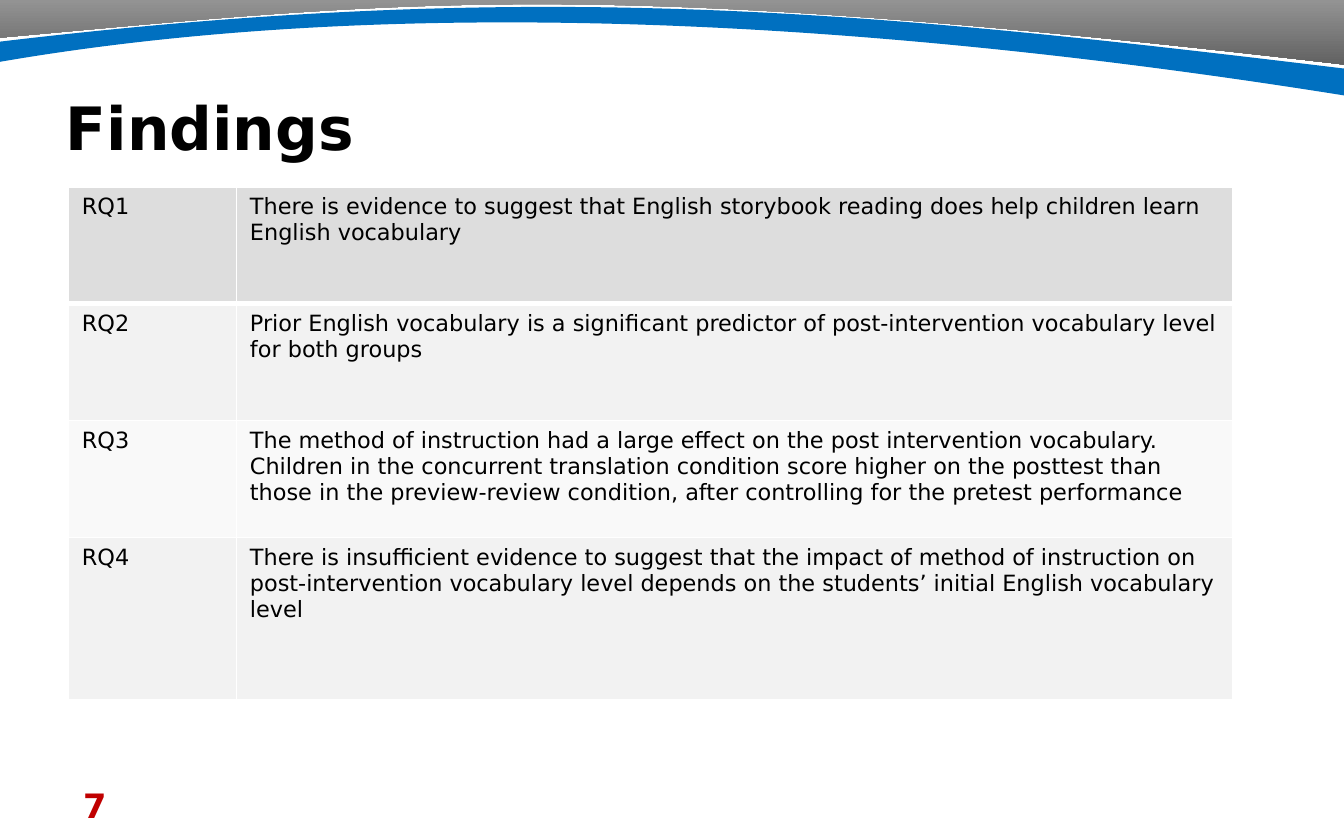
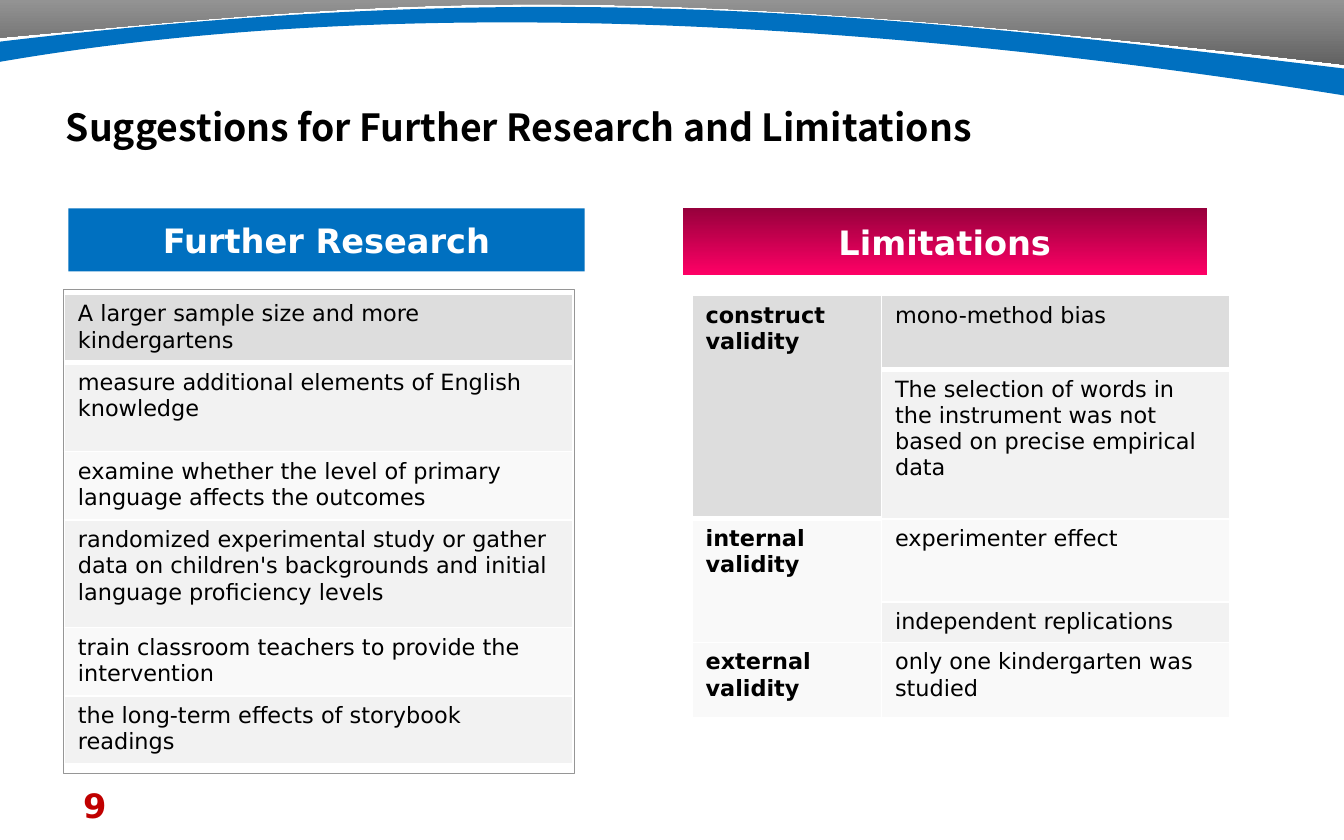
from dataclasses import dataclass

from lxml.etree import SubElement as Sub
from pptx import Presentation
from pptx.dml.color import RGBColor as Rgb
from pptx.enum.shapes import MSO_SHAPE as Form
from pptx.enum.text import MSO_ANCHOR as Anchor, MSO_AUTO_SIZE as Fit, PP_ALIGN as Align
from pptx.oxml.ns import qn
from pptx.util import Inches, Pt

SANS = "DejaVu Sans"
BLACK, WHITE, RED, BLUE = "000000", "FFFFFF", "C00000", "0070C0"
HEAD, DARK, LIGHT = "DDDDDD", "F2F2F2", "F9F9F9"
BODY = {"name": SANS, "size": Pt(12), "bold": False}
BOLD = BODY | {"bold": True}
LABEL = BOLD | {"size": Pt(18)}
LARGE = BOLD | {"size": Pt(32)}
SMALL = BOLD | {"name": "Noto Sans CJK SC", "size": Pt(20)}

Point = tuple[float, float]


@dataclass
class Box:
    left: float
    top: float
    width: float
    height: float

    def place(self) -> tuple:
        return tuple(Inches(v) for v in (self.left, self.top, self.width, self.height))


@dataclass
class Band:
    points: list[Point]
    bends: tuple[int, ...]
    fills: tuple[str, ...]


@dataclass
class Banner:
    text: str
    box: Box
    fills: tuple[str, ...]


@dataclass
class Grid:
    left: float
    top: float
    cols: list[float]
    rows: list[float]
    texts: list[list[str]]
    merges: tuple[int, ...] = ()
    lead: bool = False


BANDS = [
    Band([(10, 0.48), (4.43, -0.17), (3.08, 0), (0, 0.28), (0, 0.19), (0, -0.02),
          (10, -0.02)], (1,), ("A6A6A6", "626262")),
    Band([(0, 0.31), (4.03, -0.17), (6.52, 0.09), (10, 0.51), (10, 0.71), (6.05, 0.08),
          (2.67, 0), (0, 0.46)], (1, 5), (BLUE,)),
]
FINDINGS = Grid(0.51, 1.39, [1.25, 7.41], [0.87, 0.87, 0.87, 1.21], [
    ["RQ1", "There is evidence to suggest that English storybook reading does help "
            "children learn English vocabulary"],
    ["RQ2", "Prior English vocabulary is a significant predictor of post-intervention "
            "vocabulary level for both groups"],
    ["RQ3", "The method of instruction had a large effect on the post intervention "
            "vocabulary.\nChildren in the concurrent translation condition score higher on "
            "the posttest than those in the preview-review condition, after controlling "
            "for the pretest performance"],
    ["RQ4", "There is insufficient evidence to suggest that the impact of method of "
            "instruction on post-intervention vocabulary level depends on the students’ "
            "initial English vocabulary level"],
])
FURTHER = Grid(0.48, 2.19, [3.78], [0.51, 0.66, 0.51, 0.8, 0.51, 0.5], [
    ["A larger sample size and more kindergartens"],
    ["measure additional elements of English knowledge"],
    ["examine whether the level of primary language affects the outcomes"],
    ["randomized experimental study or gather data on children's backgrounds and "
     "initial language proficiency levels"],
    ["train classroom teachers to provide the intervention"],
    ["the long-term effects of storybook readings"],
])
LIMITS = Grid(5.15, 2.2, [1.41, 2.59], [0.55, 1.11, 0.62, 0.3, 0.56], [
    ["construct validity", "mono-method bias"],
    ["", "The selection of words in the instrument was not based on precise "
         "empirical data"],
    ["internal validity", "experimenter effect"],
    ["", "independent replications"],
    ["external validity", "only one kindergarten was studied"],
], merges=(0, 2), lead=True)
BANNERS = [
    Banner("Limitations", Box(5.08, 1.55, 3.9, 0.5), ("97003C", "FF0066")),
    Banner("Further Research", Box(0.51, 1.55, 3.84, 0.47), (BLUE,)),
]


def tint(code: str) -> Rgb:
    return Rgb.from_string(code)


def paint(fill, *codes: str) -> None:
    if len(codes) == 1:
        fill.solid()
        fill.fore_color.rgb = tint(codes[0])
        return
    fill.gradient()
    fill.gradient_angle = 270
    for stop, code in zip(fill.gradient_stops, codes):
        stop.color.rgb = tint(code)


def write(frame, text: str, style: dict, code: str = BLACK, align=Align.LEFT) -> None:
    for i, line in enumerate(text.split("\n")):
        para = frame.add_paragraph() if i else frame.paragraphs[0]
        para.alignment = align
        run = para.add_run()
        run.text = line
        for key, value in style.items():
            setattr(run.font, key, value)
        run.font.color.rgb = tint(code)


def bend(shape, starts: tuple[int, ...]) -> None:
    route = next(shape.element.iter(qn("a:path")))
    steps = list(route)
    for start in starts:
        arc = Sub(route, qn("a:cubicBezTo"))
        steps[start].addprevious(arc)
        for step in steps[start:start + 3]:
            arc.append(step[0])
            route.remove(step)


def add_band(slide, band: Band):
    spots = [(Inches(x), Inches(y)) for x, y in band.points]
    pen = slide.shapes.build_freeform(*spots[0])
    pen.add_line_segments(spots[1:], close=True)
    shape = pen.convert_to_shape()
    bend(shape, band.bends)
    shape.shadow.inherit = False
    shape.line.fill.background()
    paint(shape.fill, *band.fills)
    return shape


def share_bands(slide) -> None:
    tree = slide.slide_layout.shapes.element
    for number, band in enumerate(BANDS, 20):
        item = add_band(slide, band).element
        next(item.iter(qn("p:cNvPr"))).set("id", str(number))
        tree.append(item)


def add_banner(slide, item: Banner) -> None:
    shape = slide.shapes.add_shape(Form.RECTANGLE, *item.box.place())
    shape.shadow.inherit = False
    shape.line.fill.background()
    paint(shape.fill, *item.fills)
    frame = shape.text_frame
    frame.word_wrap = False
    frame.vertical_anchor = Anchor.MIDDLE
    write(frame, item.text, LABEL, WHITE, Align.CENTER)


def add_frame(slide, box: Box) -> None:
    shape = slide.shapes.add_shape(Form.ROUNDED_RECTANGLE, *box.place())
    shape.adjustments[0] = 0
    shape.shadow.inherit = False
    shape.fill.background()
    shape.line.color.rgb = tint("969696")
    shape.line.width = Pt(0.25)


def edge(cell, first: bool) -> None:
    props = cell._tc.get_or_add_tcPr()
    for side in "LRTB":
        width = Pt(3 if first and side == "B" else 1)
        line = Sub(props, qn(f"a:ln{side}"), w=str(width))
        Sub(Sub(line, qn("a:solidFill")), qn("a:srgbClr"), val=WHITE)


def add_grid(slide, grid: Grid) -> None:
    box = Box(grid.left, grid.top, sum(grid.cols), sum(grid.rows))
    table = slide.shapes.add_table(len(grid.rows), len(grid.cols), *box.place()).table
    table.first_row = table.horz_banding = False
    for col, width in zip(table.columns, grid.cols):
        col.width = Inches(width)
    for r, texts in enumerate(grid.texts):
        table.rows[r].height = Inches(grid.rows[r])
        shade = HEAD if r == 0 else DARK if r % 2 else LIGHT
        for c, text in enumerate(texts):
            cell = table.cell(r, c)
            edge(cell, r == 0)
            paint(cell.fill, shade)
            if text:
                write(cell.text_frame, text, BOLD if grid.lead and c == 0 else BODY)
    for r in grid.merges:
        table.cell(r, 0).merge(table.cell(r + 1, 0))


def add_slide(deck, title: str, style: dict, number: str):
    slide = deck.slides.add_slide(deck.slide_layouts[5])
    head = slide.shapes.title
    head.left, head.top, head.width, head.height = Box(0, 0.6, 9, 0.69).place()
    frame = head.text_frame
    look = {"auto_size": Fit.NONE, "word_wrap": True,
            "vertical_anchor": Anchor.MIDDLE, "margin_left": Inches(0.49)}
    for key, value in look.items():
        setattr(frame, key, value)
    write(frame, title, style)
    page = slide.shapes.add_textbox(*Box(0.52, 5.79, 2.33, 0.33).place())
    page.text_frame.word_wrap = True
    write(page.text_frame, number, LABEL, RED)
    return slide


def main() -> None:
    deck = Presentation()
    deck.slide_width, deck.slide_height = Inches(10), Inches(6.25)
    slide = add_slide(deck, "Findings", LARGE, "7")
    share_bands(slide)
    add_grid(slide, FINDINGS)
    slide = add_slide(deck, "Suggestions for Further Research and Limitations", SMALL, "9")
    add_frame(slide, Box(0.47, 2.15, 3.8, 3.6))
    for item in BANNERS:
        add_banner(slide, item)
    for grid in (FURTHER, LIMITS):
        add_grid(slide, grid)
    deck.save("out.pptx")


if __name__ == "__main__":
    main()
